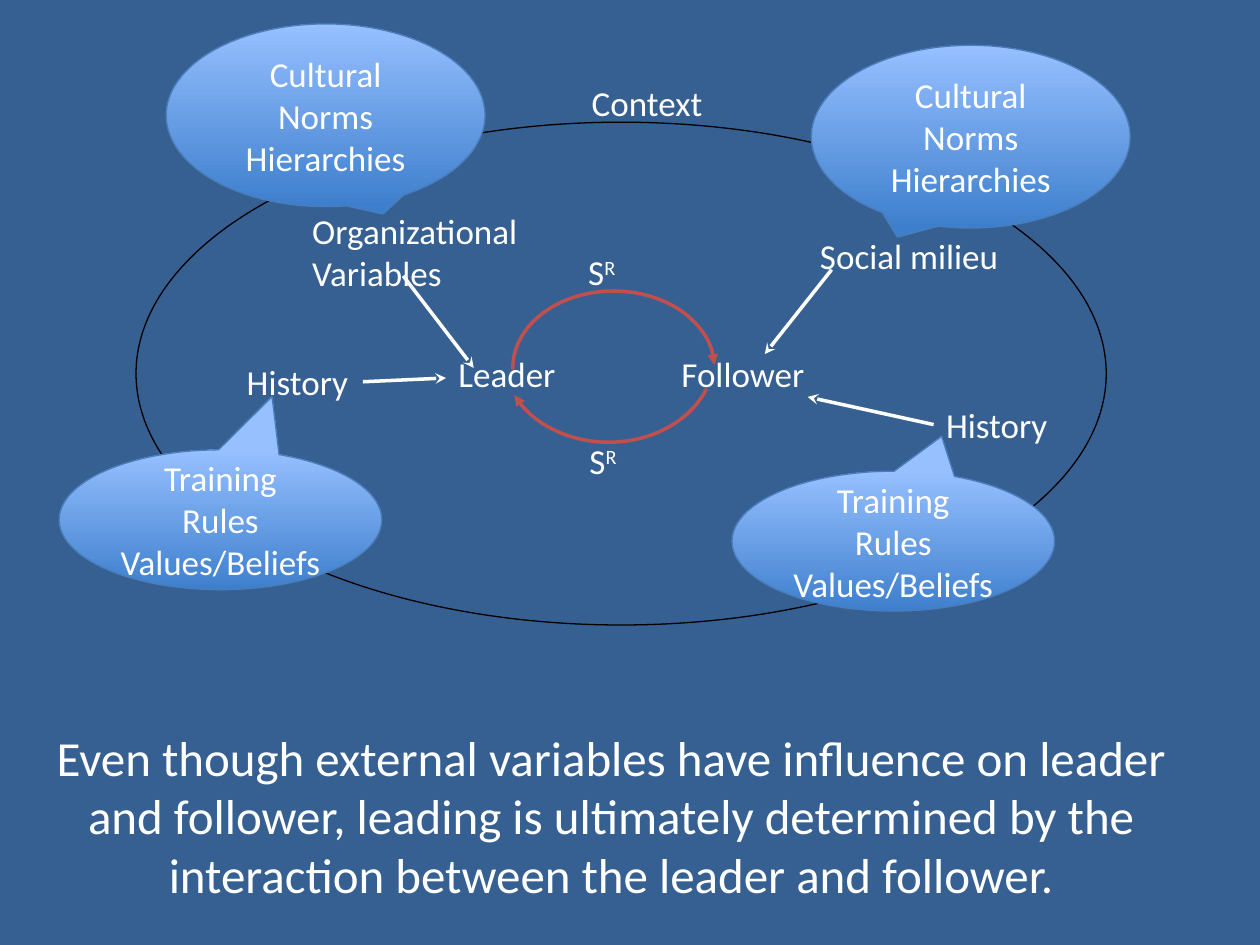
from lxml.etree import SubElement
from pptx import Presentation
from pptx.dml.color import RGBColor
from pptx.enum.shapes import MSO_CONNECTOR, MSO_SHAPE
from pptx.enum.text import MSO_ANCHOR, MSO_AUTO_SIZE, PP_ALIGN
from pptx.oxml.ns import qn
from pptx.util import Inches, Pt

COLUMNS = 100
FONT = "Calibri"
WHITE, BLACK, RED = "FFFFFF", "000000", "C0504D"
BACKGROUND, CALLOUT_LINE = "366092", "4A7DBA"
CALLOUT_GRADIENT = ("3E7FCD", "96C0FF")

STATEMENT = (
    "Even though external variables have influence on leader and follower, "
    "leading is ultimately determined by the interaction between the leader and follower."
)
STATEMENT_BOX = (0.8, 57.2, 95.4, 15.1)
CONTEXT_BOX = (10.8, 9.7, 77, 39.9)

LABELS = {
    "context": ("Context", (38.6, 6, 25.5, 4.4)),
    "leader": ("Leader", (35.4, 27.5, 9.8, 4.4)),
    "follower": ("Follower", (53.1, 27.5, 12, 4.4)),
    "upper response": ("SR", (45.7, 19.4, 5.6, 4.4)),
    "lower response": ("SR", (45.8, 34.4, 5.6, 4.4)),
    "organization": ("Organizational\nVariables", (23.8, 16.1, 18.6, 7.7)),
    "leader history": ("History", (18.6, 28.1, 10.2, 4.4)),
    "social milieu": ("Social milieu", (64.1, 18.1, 16.3, 4.4)),
    "follower history": ("History", (74.1, 31.5, 10.2, 4.4)),
}

CULTURE = ("Cultural Norms\nHierarchies", (25.3, 14.5))
BACKGROUND_VALUES = ("Training\nRules\nValues/Beliefs", (25.6, 11.1))
CALLOUTS = [
    (CULTURE, (13.2, 1.9), (0.18, 0.54)),
    (BACKGROUND_VALUES, (4.7, 35.7), (0.16, -0.88)),
    (CULTURE, (64.4, 3.6), (-0.23, 0.55)),
    (BACKGROUND_VALUES, (58.1, 37.4), (0.15, -0.75)),
]

ARROWS = [
    ((32, 21.9), (37.6, 29.2), None),
    ((28.8, 30.3), (35.4, 30), ("leader history", 3)),
    ((66, 21.4), (60.7, 28.1), None),
    ((74.1, 33.7), (64.1, 31.5), ("follower history", 1)),
]

ARCS = [
    ((40.7, 23.1, 16, 12.2), (179.21, 358.3), 0),
    ((39.9, 21.4, 16.8, 13.7), (198.57, 337.44), 180),
]


def color(value):
    return RGBColor.from_string(value)


def grid(values):
    return [round(value * cell) for value in values]


def set_line(item, value, width, arrowhead=None):
    item.line.color.rgb = color(value)
    item.line.width = Pt(width)
    if arrowhead:
        SubElement(item.line._get_or_add_ln(), qn("a:tailEnd"), type=arrowhead)


def write(shape, text, size=20, align=PP_ALIGN.CENTER, anchor=MSO_ANCHOR.TOP):
    frame = shape.text_frame
    frame.text = text
    frame.word_wrap = True
    frame.auto_size = MSO_AUTO_SIZE.NONE
    frame.vertical_anchor = anchor
    for paragraph in frame.paragraphs:
        paragraph.alignment = align
        for run in paragraph.runs:
            style(run, size)


def style(run, size):
    run.font.name = FONT
    run.font.size = Pt(size)
    run.font.color.rgb = color(WHITE)


def add_shape(kind, box):
    shape = slide.shapes.add_shape(kind, *grid(box))
    shape.shadow.inherit = False
    shape.fill.background()
    return shape


def add_label(text, box):
    label = slide.shapes.add_textbox(*grid(box))
    align = PP_ALIGN.CENTER if text == "Context" else PP_ALIGN.LEFT
    if text == "SR":
        write(label, "S", align=align)
        exponent = label.text_frame.paragraphs[0].add_run()
        exponent.text = "R"
        style(exponent, 20)
        exponent._r.get_or_add_rPr().set("baseline", "30000")
    else:
        write(label, text, align=align)
    return label


def add_callout(content, position, pointer):
    text, size = content
    callout = add_shape(MSO_SHAPE.OVAL_CALLOUT, position + size)
    callout.adjustments[0], callout.adjustments[1] = pointer
    callout.fill.gradient()
    callout.fill.gradient_angle = 90
    for stop, value in zip(callout.fill.gradient_stops, CALLOUT_GRADIENT):
        stop.color.rgb = color(value)
    for stop, place in zip(callout.fill.gradient_stops, (0, 1)):
        stop.position = place
    set_line(callout, CALLOUT_LINE, 0.75)
    write(callout, text, anchor=MSO_ANCHOR.MIDDLE)


def add_arrow(start, end, source):
    arrow = slide.shapes.add_connector(MSO_CONNECTOR.STRAIGHT, *grid(start + end))
    if source:
        name, side = source
        arrow.begin_connect(labels[name], side)
    set_line(arrow, WHITE, 2, "stealth")
    SubElement(arrow._element.spPr, qn("a:effectLst"))


def add_arc(box, angles, rotation):
    arc = add_shape(MSO_SHAPE.ARC, box)
    for index, angle in enumerate(angles):
        arc.adjustments[index] = angle * 0.6
    arc.rotation = rotation
    set_line(arc, RED, 2, "triangle")


presentation = Presentation()
presentation.slide_width, presentation.slide_height = Inches(10), Inches(7.5)
cell = presentation.slide_width / COLUMNS
slide = presentation.slides.add_slide(presentation.slide_layouts[5])
slide.background.fill.solid()
slide.background.fill.fore_color.rgb = color(BACKGROUND)

title = slide.shapes.title
title.left, title.top, title.width, title.height = grid(STATEMENT_BOX)
write(title, STATEMENT, 28)

set_line(add_shape(MSO_SHAPE.OVAL, CONTEXT_BOX), BLACK, 0.75)
labels = {name: add_label(*label) for name, label in LABELS.items()}
for arc in ARCS:
    add_arc(*arc)
for arrow in ARROWS:
    add_arrow(*arrow)
for callout in CALLOUTS:
    add_callout(*callout)

presentation.save("out.pptx")
